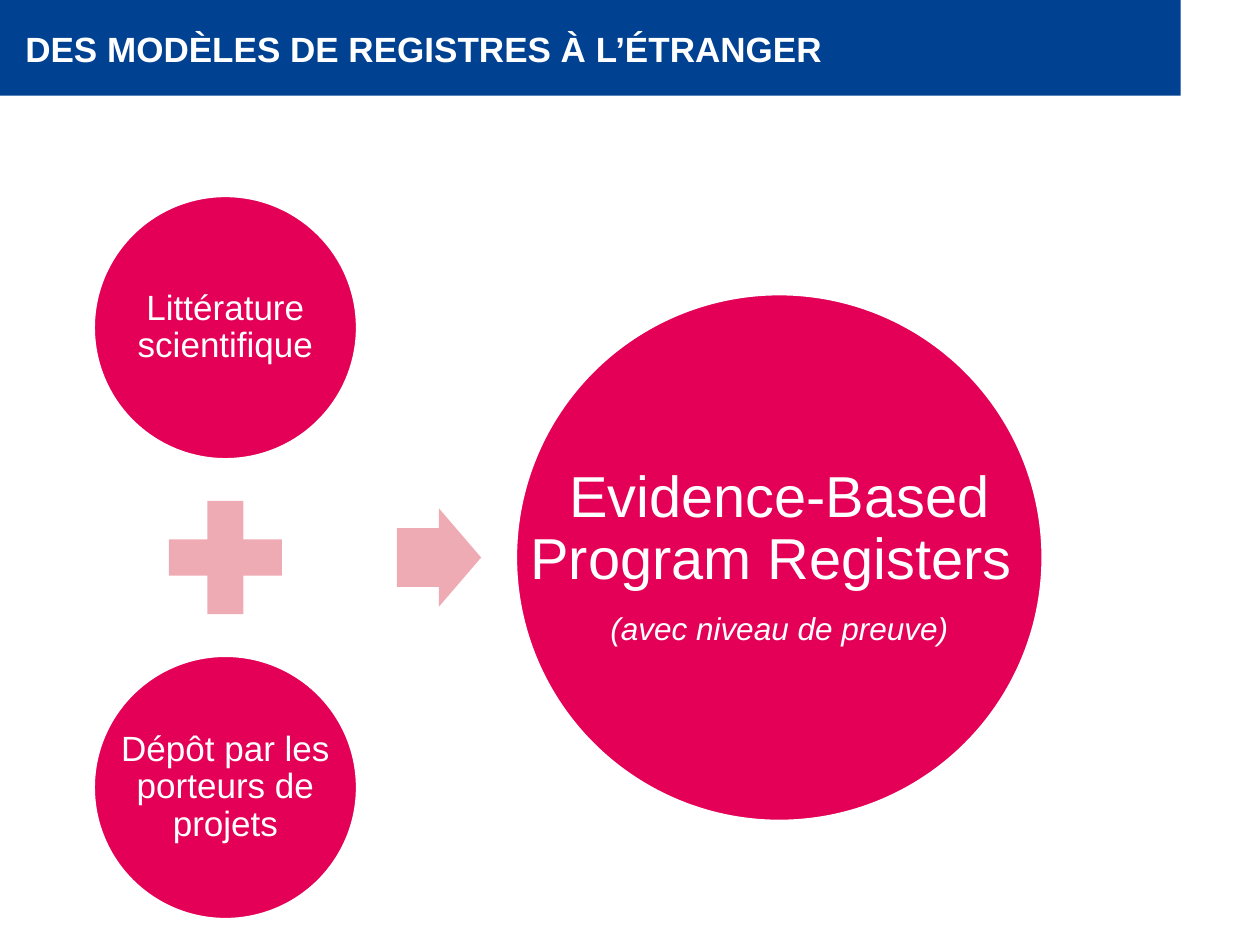
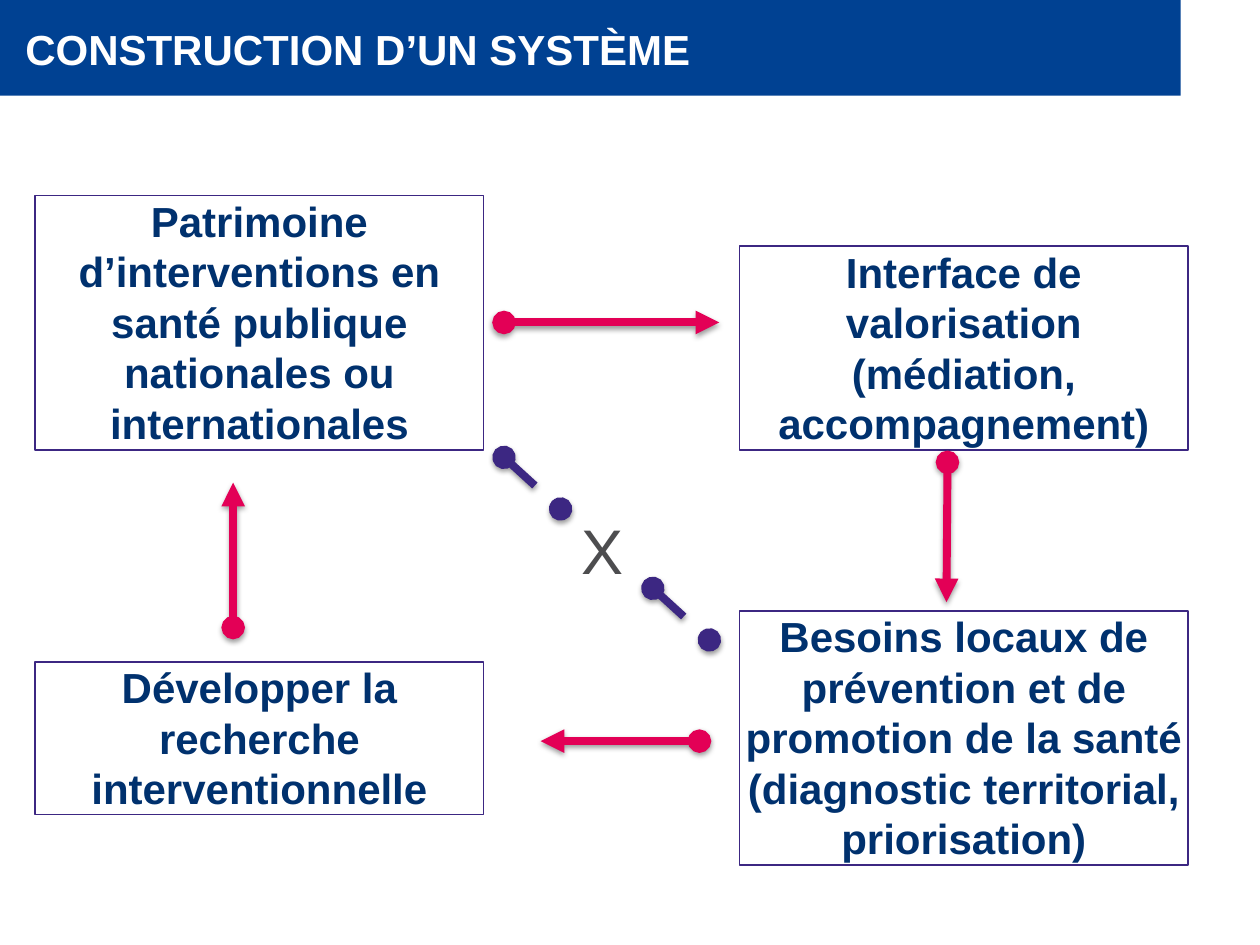
from lxml.etree import SubElement
from pptx import Presentation
from pptx.dml.color import RGBColor
from pptx.enum.dml import MSO_LINE
from pptx.enum.shapes import MSO_CONNECTOR, MSO_SHAPE
from pptx.enum.text import MSO_ANCHOR, MSO_AUTO_SIZE, PP_ALIGN
from pptx.oxml.ns import qn
from pptx.util import Cm, Pt

FONT = "Arial"
WHITE, BLUE, NAVY = "FFFFFF", "004192", "00316E"
PINK, PALE_PINK, PURPLE, GREY = "E30056", "EFABB4", "3C2782", "4D4D4F"
LINE_HEIGHT = 1.026


def color(hex_code):
    """Turn a hex string into a colour."""
    return RGBColor.from_string(hex_code)


def write(frame, text, size=24, hex_code=WHITE, bold=False, italic=False,
          align=PP_ALIGN.CENTER, anchor=MSO_ANCHOR.MIDDLE, inset=0,
          spacing=1.0, after=0, append=False):
    """Write one formatted paragraph into a text frame."""
    frame.word_wrap = True
    frame.auto_size = MSO_AUTO_SIZE.NONE
    frame.vertical_anchor = anchor
    frame.margin_left = frame.margin_right = Cm(inset)
    frame.margin_top = frame.margin_bottom = Cm(inset)
    paragraph = frame.add_paragraph() if append else frame.paragraphs[0]
    paragraph.alignment = align
    paragraph.line_spacing = spacing
    paragraph.space_before = Pt(0)
    paragraph.space_after = Pt(after)
    run = paragraph.add_run()
    run.text = text
    run.font.name = FONT
    run.font.size = Pt(size)
    run.font.bold = bold
    run.font.italic = italic
    run.font.color.rgb = color(hex_code)


def add_box(slide, kind, left, top, width, height, fill=None, line=None, line_width=1):
    """Add a flat preset shape with an optional fill and outline."""
    shape = slide.shapes.add_shape(kind, Cm(left), Cm(top), Cm(width), Cm(height))
    shape.shadow.inherit = False
    if fill:
        shape.fill.solid()
        shape.fill.fore_color.rgb = color(fill)
    else:
        shape.fill.background()
    if line:
        shape.line.color.rgb = color(line)
        shape.line.width = Pt(line_width)
    else:
        shape.line.fill.background()
    return shape


def add_text_box(slide, left, top, width, height):
    """Add an empty text box and return its frame."""
    return slide.shapes.add_textbox(Cm(left), Cm(top), Cm(width), Cm(height)).text_frame


def add_titled_slide(presentation, text, size):
    """Add a slide with the blue band and its title."""
    slide = presentation.slides.add_slide(presentation.slide_layouts[5])
    title = slide.shapes.title
    title.left, title.top, title.width, title.height = Cm(0.51), Cm(0.2), Cm(19.2), Cm(1.55)
    write(title.text_frame, text, size=size, bold=True, align=PP_ALIGN.LEFT)
    band = add_box(slide, MSO_SHAPE.RECTANGLE, 0, 0, 23.8, 1.93, fill=BLUE)
    title.element.addprevious(band.element)
    return slide


def add_circle(slide, left, top, diameter, inset, *paragraphs):
    """Add a pink circle with text that spans its full width."""
    square = (left, top, diameter, diameter)
    add_box(slide, MSO_SHAPE.OVAL, *square, fill=PINK, line=WHITE, line_width=2)
    frame = add_text_box(slide, *square)
    for index, (text, style) in enumerate(paragraphs):
        write(frame, text, inset=inset, spacing=0.9, append=index > 0, **style)


def add_register_equation(slide, left, top, width, height):
    """Draw two sources that add up to the registers."""
    small, large, plus = 5.33, 10.64, 3.1
    arrow_width, arrow_height = 1.7, 1.98
    middle = top + height / 2
    add_circle(slide, left, top, small, 0.08, ("Littérature scientifique", {"size": 20}))
    add_box(slide, MSO_SHAPE.MATH_PLUS, left + (small - plus) / 2, middle - plus / 2,
            plus, plus, fill=PALE_PINK)
    add_circle(slide, left, top + height - small, small, 0.08,
               ("Dépôt par les porteurs de projets", {"size": 20}))
    arrow = add_box(slide, MSO_SHAPE.RIGHT_ARROW, left + 6.12, middle - arrow_height / 2,
                    arrow_width, arrow_height, fill=PALE_PINK)
    arrow.adjustments[0] = 0.6
    add_circle(slide, left + width - large, middle - large / 2, large, 0.13,
               ("Evidence-Based Program Registers ", {"size": 33, "after": 12}),
               ("(avec niveau de preuve)", {"size": 18, "italic": True}))


def add_link(slide, start, end, hex_code, tail, dash=None):
    """Add a thick shadowed link that starts with a dot."""
    connector = slide.shapes.add_connector(
        MSO_CONNECTOR.STRAIGHT, *(Cm(length) for length in (*start, *end)))
    connector.line.color.rgb = color(hex_code)
    connector.line.width = Pt(4.5)
    if dash:
        connector.line.dash_style = dash
    properties = connector.element.spPr
    outline = properties.find(qn("a:ln"))
    SubElement(outline, qn("a:headEnd"), type="oval")
    SubElement(outline, qn("a:tailEnd"), type=tail)
    effects = SubElement(properties, qn("a:effectLst"))
    shadow = SubElement(effects, qn("a:outerShdw"), blurRad="38100", dist="20000",
                        dir="5400000", rotWithShape="0")
    shade = SubElement(shadow, qn("a:srgbClr"), val="000000")
    SubElement(shade, qn("a:alpha"), val="38000")


def add_system_cycle(slide, left, top, width):
    """Draw the four steps, the links between them and the broken diagonal."""
    step_width = 9.04
    right = left + width - step_width
    upper_bottom, lower_middle = top + 5.13, top + 10.94
    steps = [
        ("Patrimoine d’interventions en santé publique nationales ou internationales",
         left, 5, True),
        ("Besoins locaux de prévention et de promotion de la santé "
         "(diagnostic territorial, priorisation)", right, 5, False),
        ("Interface de valorisation (médiation, accompagnement)", right, 4, True),
        ("Développer la recherche interventionnelle", left, 3, False),
    ]
    for text, step_left, lines, is_upper in steps:
        height = lines * LINE_HEIGHT
        step_top = upper_bottom - height if is_upper else lower_middle - height / 2
        step = add_box(slide, MSO_SHAPE.RECTANGLE, step_left, step_top, step_width, height,
                       line=PURPLE)
        write(step.text_frame, text, hex_code=NAVY, bold=True, anchor=MSO_ANCHOR.TOP)

    flows = [
        (9.45, 2.56, 13.79, 2.56),
        (18.39, 5.38, 18.37, 8.2),
        (3.99, 8.71, 3.99, 5.79),
        (13.39, 11, 10.19, 11),
    ]
    for x1, y1, x2, y2 in flows:
        add_link(slide, (left + x1, top + y1), (left + x2, top + y2), PINK, "triangle")

    for part in range(2):
        x, y = left + 9.45 + part * 3, top + 5.28 + part * 2.64
        add_link(slide, (x, y), (x + 1.14, y + 1.04), PURPLE, "oval", MSO_LINE.DASH_DOT)
    cross = add_text_box(slide, left + 11.02, top + 6.37, 1.19, 1.55)
    write(cross, "X", size=36, hex_code=GREY, align=PP_ALIGN.LEFT, anchor=MSO_ANCHOR.TOP)


def main():
    """Build both slides and save them."""
    presentation = Presentation()
    presentation.slide_width, presentation.slide_height = Cm(25.4), Cm(19.05)
    registers = add_titled_slide(presentation, "DES MODÈLES DE REGISTRES À L’ÉTRANGER", 20)
    add_register_equation(registers, 1.88, 3.94, 19.15, 14.6)
    system = add_titled_slide(presentation, "CONSTRUCTION D’UN SYSTÈME", 24)
    add_system_cycle(system, 0.71, 3.94, 23.24)
    presentation.save("out.pptx")


if __name__ == "__main__":
    main()
